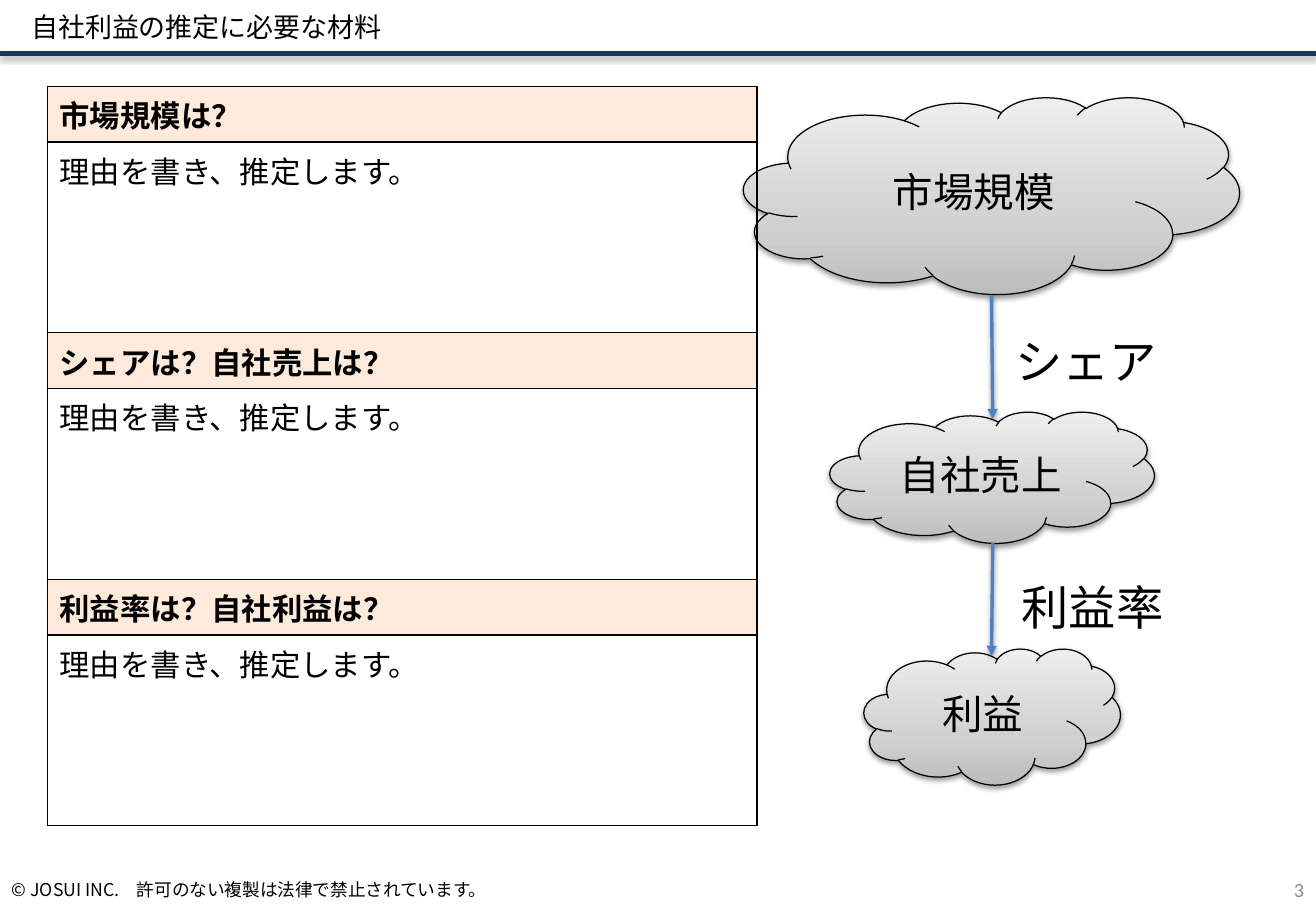
"""Build the slide on what is needed to estimate a company's own profit."""
from copy import deepcopy

from lxml import etree
from pptx import Presentation
from pptx.dml.color import RGBColor
from pptx.enum.shapes import MSO_CONNECTOR, MSO_SHAPE
from pptx.enum.text import MSO_ANCHOR, MSO_AUTO_SIZE, PP_ALIGN
from pptx.oxml import parse_xml
from pptx.oxml.ns import nsdecls, qn
from pptx.util import Emu, Pt

CLOUD = MSO_SHAPE.CLOUD
STRAIGHT = MSO_CONNECTOR.STRAIGHT
TOP, MIDDLE = MSO_ANCHOR.TOP, MSO_ANCHOR.MIDDLE
LEFT, CENTER, RIGHT = PP_ALIGN.LEFT, PP_ALIGN.CENTER, PP_ALIGN.RIGHT
FIT_SHAPE = MSO_AUTO_SIZE.SHAPE_TO_FIT_TEXT

PX = 9144
THEME = {
    "font": "Noto Sans CJK JP", "number_font": "Calibri",
    "text": "000000", "muted": "8C8C8C", "border": "000000",
    "rule": "17375E", "arrow": "4F81BD", "heading_fill": "FDEADA",
    "cloud_stops": [(0, "BDBDBD"), (0.35, "D1D1D1"), (1, "EEEEEE")],
    "title": 16, "footer": 10.5, "number": 12,
    "cloud": 24, "ratio": 28, "table": 18,
}


def write(frame, text, size, align=LEFT, color="text", font="font", bold=False):
    """Fill a text frame with one formatted paragraph."""
    frame.text = text
    paragraph = frame.paragraphs[0]
    paragraph.alignment = align
    run = paragraph.runs[0]
    run.font.size = Pt(THEME[size])
    run.font.bold = bold
    run.font.color.rgb = RGBColor.from_string(THEME[color])
    run.font.name = THEME[font]
    east_asian = etree.SubElement(run.font._element, qn("a:ea"))
    east_asian.set("typeface", THEME[font])


def cast_shadow(item, distance=20000, opacity=38000):
    """Give a shape or connector a soft shadow straight below it."""
    item._element.spPr.append(parse_xml(
        f'<a:effectLst {nsdecls("a")}><a:outerShdw blurRad="40000" dist="{distance}" '
        f'dir="5400000" rotWithShape="0"><a:srgbClr val="000000">'
        f'<a:alpha val="{opacity}"/></a:srgbClr></a:outerShdw></a:effectLst>'))


prs = Presentation()
prs.slide_width, prs.slide_height = Emu(1083 * PX), Emu(750 * PX)
shapes = prs.slides.add_slide(prs.slide_layouts[6]).shapes

title_rule = shapes.add_connector(STRAIGHT, 0, 44 * PX, 1083 * PX, 44 * PX)
title_rule.line.color.rgb = RGBColor.from_string(THEME["rule"])
title_rule.line.width = Pt(3)
cast_shadow(title_rule, 23000, 35000)

labels = [
    (16, 0, 959, 44, "自社利益の推定に必要な材料", "title", LEFT, "text", "font"),
    (0, 715, 1049, 35, "© JOSUI INC.　許可のない複製は法律で禁止されています。",
     "footer", LEFT, "text", "font"),
    (831, 715, 252, 35, "3", "number", RIGHT, "muted", "number_font"),
]
for left, top, width, height, text, *style in labels:
    label = shapes.add_textbox(left * PX, top * PX, width * PX, height * PX).text_frame
    label.word_wrap = True
    label.vertical_anchor = MIDDLE
    write(label, text, *style)

clouds = [
    (612, 80, 408, 162, "市場規模"),
    (683, 339, 267, 108, "自社売上"),
    (711, 534, 211, 112, "利益"),
]
for left, top, width, height, text in clouds:
    cloud = shapes.add_shape(CLOUD, left * PX, top * PX, width * PX, height * PX)
    cloud.fill.gradient()
    cloud.fill.gradient_angle = 90
    stop_list = cloud._element.spPr.find(".//" + qn("a:gsLst"))
    stop_list.append(deepcopy(stop_list[0]))
    for stop, (position, shade) in zip(cloud.fill.gradient_stops, THEME["cloud_stops"]):
        stop.position = position
        stop.color.rgb = RGBColor.from_string(shade)
    cloud.line.color.rgb = RGBColor.from_string(THEME["border"])
    cloud.line.width = Pt(0.75)
    cast_shadow(cloud)
    cloud.text_frame.vertical_anchor = MIDDLE
    write(cloud.text_frame, text, "cloud", CENTER)

for left, top, text in [(826, 269, "シェア"), (831, 471, "利益率")]:
    ratio = shapes.add_textbox(left * PX, top * PX, 138 * PX, 57 * PX).text_frame
    ratio.word_wrap = False
    ratio.auto_size = FIT_SHAPE
    write(ratio, text, "ratio")

for ends in [(816, 243, 817, 345), (817, 447, 816, 540)]:
    arrow = shapes.add_connector(STRAIGHT, *(end * PX for end in ends))
    arrow.line.color.rgb = RGBColor.from_string(THEME["arrow"])
    arrow.line.width = Pt(2)
    arrowhead = etree.SubElement(arrow.line._get_or_add_ln(), qn("a:tailEnd"))
    arrowhead.set("type", "triangle")
    cast_shadow(arrow)

questions = ["市場規模は？", "シェアは？自社売上は？", "利益率は？自社利益は？"]
rows = [row for question in questions
        for row in [(question, 46, True), ("理由を書き、推定します。", 157, False)]]
worksheet = shapes.add_table(len(rows), 1, 39 * PX, 71 * PX, 584 * PX, 608 * PX).table
worksheet.first_row = worksheet.horz_banding = False
for index, (text, height, is_question) in enumerate(rows):
    worksheet.rows[index].height = Emu(height * PX)
    cell = worksheet.cell(index, 0)
    cell.vertical_anchor = TOP
    write(cell.text_frame, text, "table", bold=is_question)
    if is_question:
        cell.fill.solid()
        cell.fill.fore_color.rgb = RGBColor.from_string(THEME["heading_fill"])
    else:
        cell.fill.background()
    for place, side in enumerate(["lnL", "lnR", "lnT", "lnB"]):
        cell._tc.get_or_add_tcPr().insert(place, parse_xml(
            f'<a:{side} {nsdecls("a")} w="12700"><a:solidFill>'
            f'<a:srgbClr val="{THEME["border"]}"/></a:solidFill></a:{side}>'))

prs.save("out.pptx")
